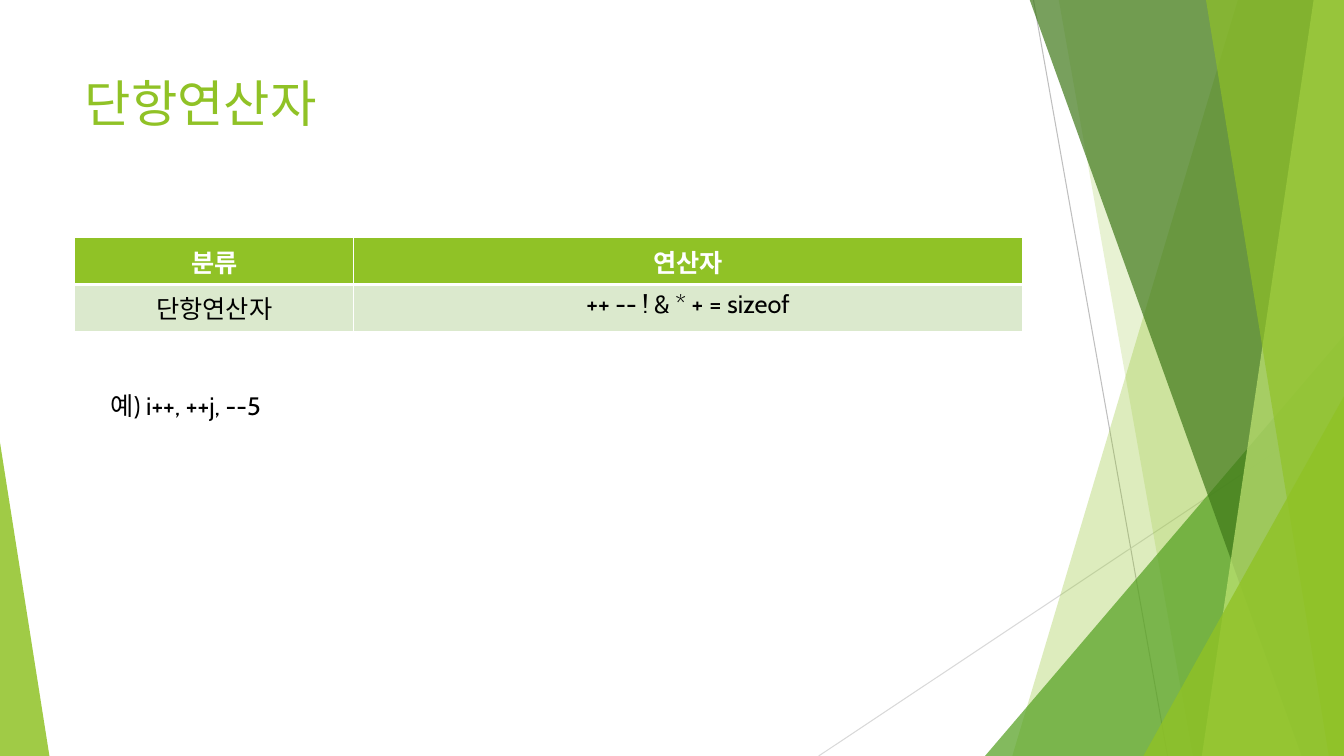
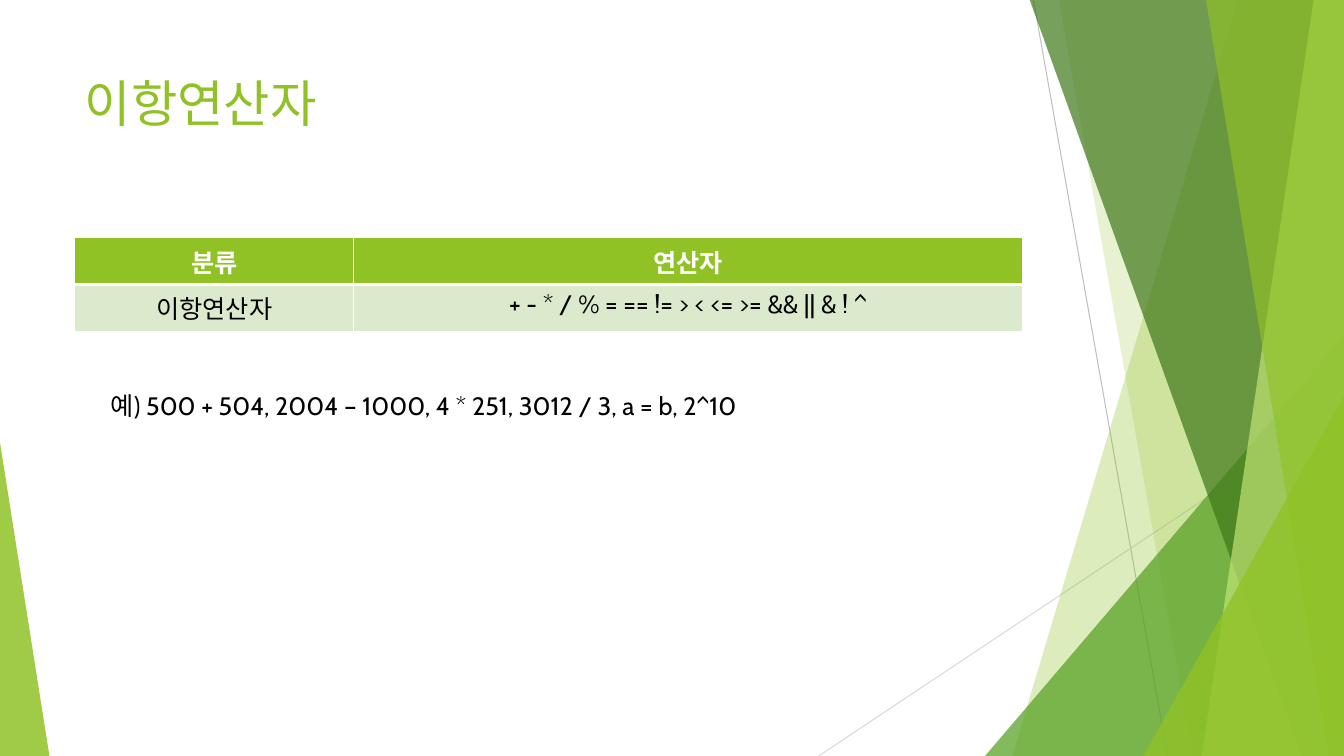
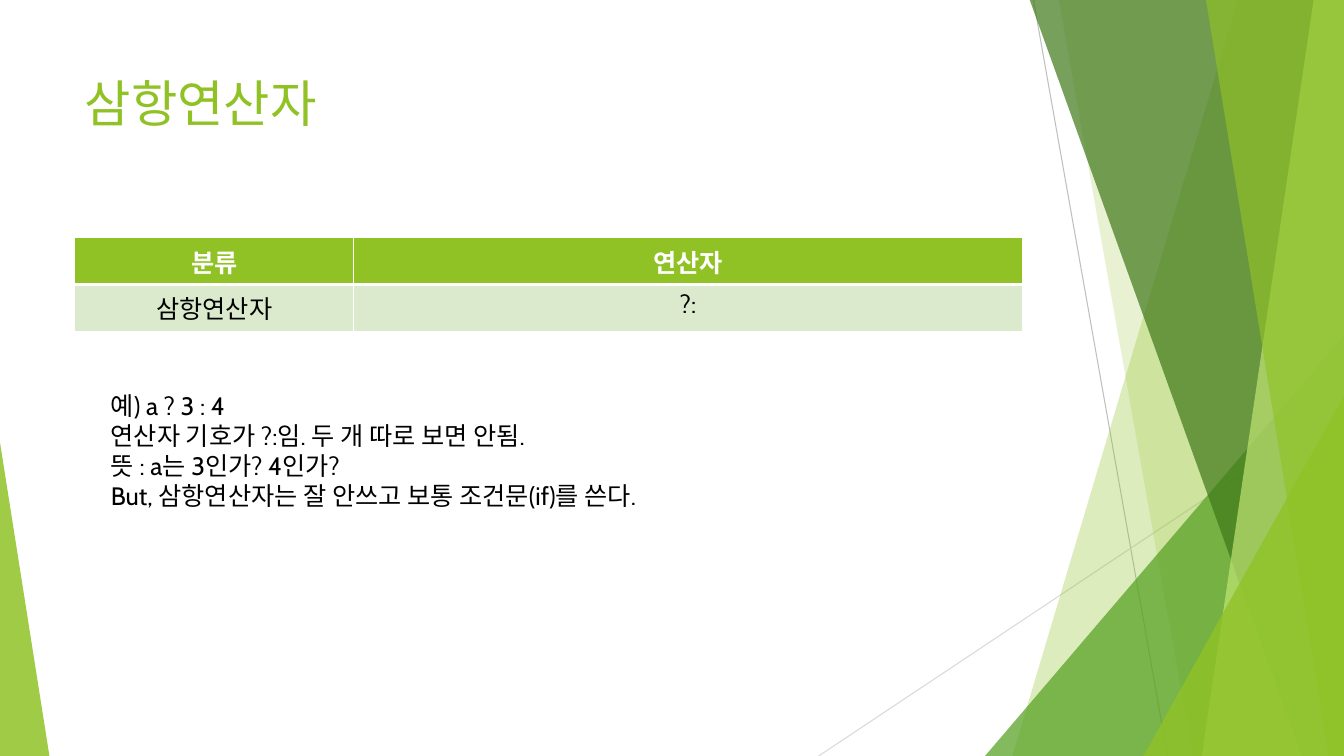
from lxml.etree import SubElement
from pptx import Presentation
from pptx.dml.color import RGBColor
from pptx.enum.shapes import MSO_CONNECTOR, MSO_SHAPE
from pptx.enum.text import MSO_ANCHOR, MSO_AUTO_SIZE, PP_ALIGN
from pptx.oxml.ns import qn
from pptx.util import Inches, Pt

FONT = "Cabin"
GREEN, LEAF, FOREST, LIME = "90C226", "54A021", "3F7819", "C0E474"
PALE, WHITE, BLACK = "DBE9CD", "FFFFFF", "000000"
WIDTH, HEIGHT = 13.33, 7.5
LEFT, CONTENT_WIDTH = 0.74, 9.4

SLIDES = [
    ("단항연산자", "++ -- ! & * + = sizeof", 1.98, 0.4, ["예) i++, ++j, --5"]),
    ("이항연산자", "+ - * / % = == != > < <= >= && || & ! ^", 6.67, 0.4,
     ["예) 500 + 504, 2004 – 1000, 4 * 251, 3012 / 3, a = b, 2^10"]),
    ("삼항연산자", "?:", 7.38, 1.35,
     ["예) a ? 3 : 4",
      "연산자 기호가 ?:임. 두 개 따로 보면 안됨.",
      "뜻 : a는 3인가? 4인가?",
      "But, 삼항연산자는 잘 안쓰고 보통 조건문(if)를 쓴다."]),
]


def rgb(color):
    return RGBColor.from_string(color)


def paint(sp, color, opacity):
    sp.shadow.inherit = False
    sp.line.fill.background()
    sp.fill.solid()
    sp.fill.fore_color.rgb = rgb(color)
    clr = sp.element.spPr.find(qn("a:solidFill")).find(qn("a:srgbClr"))
    SubElement(clr, qn("a:alpha"), val=str(opacity * 1000))


def add_line(s, x1, y1, x2, y2, color):
    line = s.shapes.add_connector(
        MSO_CONNECTOR.STRAIGHT, Inches(x1), Inches(y1), Inches(x2), Inches(y2))
    line.line.color.rgb = rgb(color)
    line.line.width = Pt(0.75)
    SubElement(line.element.spPr, qn("a:effectLst"))


def add_band(s, top_x, bottom_x, color, opacity):
    top = Inches(-0.01)
    right, bottom = Inches(WIDTH), Inches(HEIGHT)
    builder = s.shapes.build_freeform(Inches(top_x), top)
    builder.add_line_segments([(right, top), (right, bottom), (Inches(bottom_x), bottom)])
    paint(builder.convert_to_shape(), color, opacity)


def add_triangle(s, x, y, width, apex, color, opacity):
    sp = s.shapes.add_shape(
        MSO_SHAPE.ISOSCELES_TRIANGLE, Inches(x), Inches(y), Inches(width), Inches(HEIGHT - y))
    sp.adjustments[0] = apex
    paint(sp, color, opacity)


def decorate_layout(layout, s):
    for ph in list(layout.placeholders)[1:]:
        ph.element.getparent().remove(ph.element)
    add_line(s, 10.25, 0, 11.58, HEIGHT, "BFBFBF")
    add_line(s, WIDTH, 4.03, 8.12, HEIGHT, "D9D9D9")
    add_band(s, 12.28, 10.04, GREEN, 30)
    add_band(s, 10.5, 11.83, GREEN, 20)
    add_triangle(s, 9.77, 3.33, 3.56, 1, LEAF, 72)
    add_band(s, 10.21, 12.91, FOREST, 70)
    add_band(s, 13.03, 11.92, LIME, 70)
    add_band(s, 11.96, 13.18, GREEN, 65)
    add_triangle(s, 11.34, 3.93, 1.99, 1, GREEN, 80)
    add_triangle(s, 0, 4.39, 0.49, 0, GREEN, 85)
    for sp in list(s.shapes)[1:]:
        layout.shapes.element.append(sp.element)


def style(tf, size, color, align=PP_ALIGN.LEFT, bold=False):
    for p in tf.paragraphs:
        p.alignment = align
        for r in p.runs:
            r.font.name = FONT
            r.font.size = Pt(size)
            r.font.bold = bold
            r.font.color.rgb = rgb(color)


def set_title(s, text):
    title = s.shapes.title
    title.left, title.top = Inches(LEFT), Inches(0.67)
    title.width, title.height = Inches(CONTENT_WIDTH), Inches(1.44)
    tf = title.text_frame
    tf.text = text
    tf.vertical_anchor = MSO_ANCHOR.TOP
    style(tf, 36, GREEN)


def set_borders(cell, **widths):
    tc_pr = cell._tc.get_or_add_tcPr()
    for side in "LRTB":
        ln = SubElement(tc_pr, qn("a:ln" + side), w=str(Pt(widths.get(side, 1))))
        fill = SubElement(ln, qn("a:solidFill"))
        SubElement(fill, qn("a:srgbClr"), val=WHITE)


def add_operator_table(s, kind, operators):
    rows = [("분류", "연산자"), (kind, operators)]
    table = s.shapes.add_table(
        2, 2, Inches(LEFT), Inches(2.36), Inches(CONTENT_WIDTH), Inches(0.82)).table
    for column, width in zip(table.columns, (2.77, 6.63)):
        column.width = Inches(width)
    for row, height in zip(table.rows, (0.35, 0.47)):
        row.height = Inches(height)
    for i, texts in enumerate(rows):
        header = i == 0
        for j, text in enumerate(texts):
            cell = table.cell(i, j)
            cell.text_frame.text = text
            style(cell.text_frame, 18, WHITE if header else BLACK, PP_ALIGN.CENTER, header)
            set_borders(cell, **{"B" if header else "T": 3})
            cell.fill.solid()
            cell.fill.fore_color.rgb = rgb(GREEN if header else PALE)


def add_example(s, width, height, lines):
    tf = s.shapes.add_textbox(Inches(1), Inches(3.82), Inches(width), Inches(height)).text_frame
    tf.word_wrap = True
    tf.auto_size = MSO_AUTO_SIZE.SHAPE_TO_FIT_TEXT
    tf.text = "\n".join(lines)
    style(tf, 18, BLACK)


def main():
    prs = Presentation()
    prs.slide_width, prs.slide_height = Inches(WIDTH), Inches(HEIGHT)
    layout = prs.slide_layouts[5]
    for i, (kind, operators, width, height, lines) in enumerate(SLIDES):
        s = prs.slides.add_slide(layout)
        if i == 0:
            decorate_layout(layout, s)
        set_title(s, kind)
        add_operator_table(s, kind, operators)
        add_example(s, width, height, lines)
    prs.save("out.pptx")


if __name__ == "__main__":
    main()
